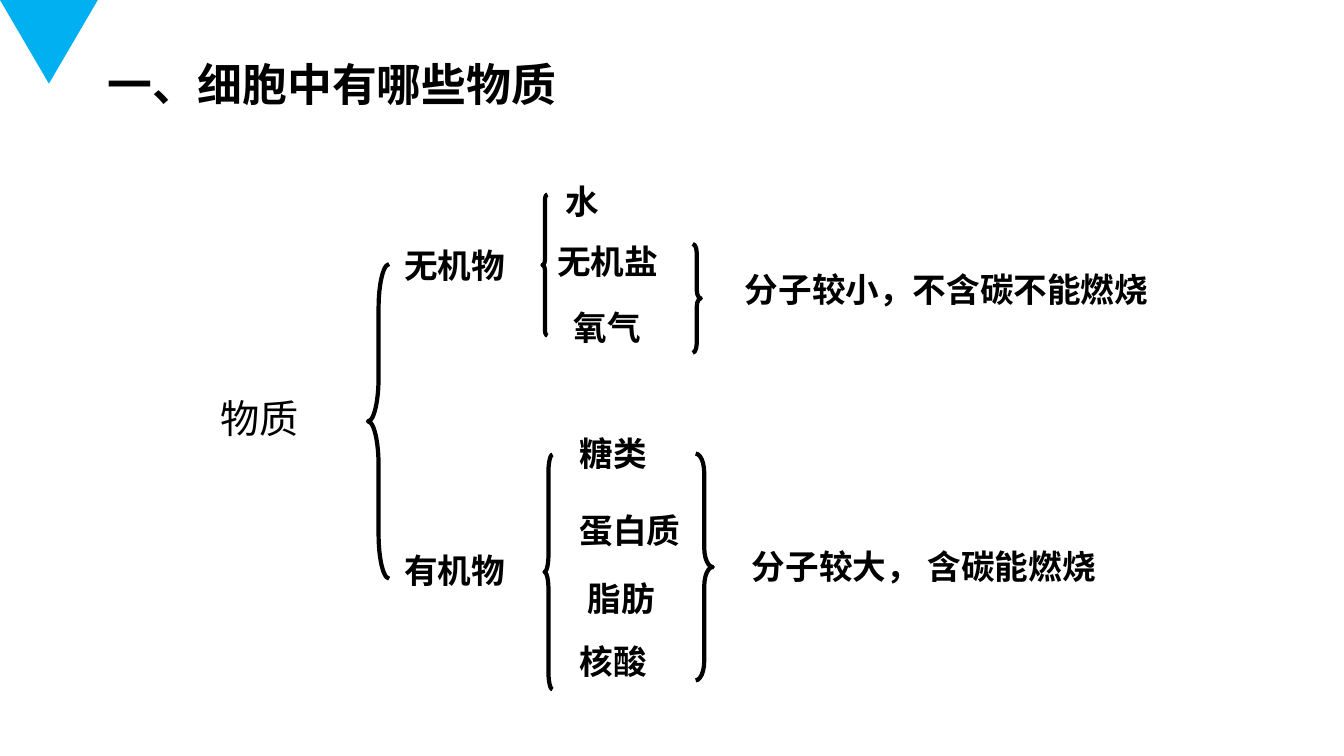
"""Build a slide that classifies the substances found in cells."""
from dataclasses import dataclass

from pptx import Presentation
from pptx.dml.color import RGBColor
from pptx.enum.shapes import MSO_SHAPE
from pptx.enum.text import MSO_ANCHOR, MSO_AUTO_SIZE, PP_ALIGN
from pptx.slide import Slide
from pptx.text.text import TextFrame
from pptx.util import Inches, Pt


@dataclass(frozen=True)
class Theme:
    font: str = "Arial"
    ink: RGBColor = RGBColor(0, 0, 0)
    accent: RGBColor = RGBColor(0x00, 0xB0, 0xF0)
    title_size: int = 32
    root_size: int = 28
    label_size: int = 24
    brace_line: int = 3


THEME = Theme()


@dataclass(frozen=True)
class Label:
    text: str
    left: float
    top: float
    width: float
    height: float = 0.5
    size: int = THEME.label_size
    bold: bool = True
    wrap: bool = False


@dataclass(frozen=True)
class Brace:
    kind: MSO_SHAPE
    left: float
    top: float
    width: float
    height: float
    curl: float


TITLE = Label("一、细胞中有哪些物质", 0.97, 0.51, 4.81, 0.64, THEME.title_size)

LABELS = (
    Label("物质", 2.09, 3.86, 1.56, 0.57, THEME.root_size, bold=False, wrap=True),
    Label("无机物", 3.91, 2.38, 1.24),
    Label("水", 5.51, 1.75, 0.65, wrap=True),
    Label("无机盐", 5.43, 2.34, 1.24),
    Label("氧气", 5.59, 3.0, 1.5, wrap=True),
    Label("分子较小，不含碳不能燃烧", 7.29, 2.62, 5.9, wrap=True),
    Label("有机物", 3.91, 5.41, 1.24),
    Label("糖类", 5.65, 4.25, 0.89),
    Label("蛋白质", 5.65, 5.01, 1.24),
    Label("脂肪", 5.73, 5.68, 0.89),
    Label("核酸", 5.65, 6.31, 0.89),
    Label("分子较大， 含碳能燃烧", 7.36, 5.37, 5.9, wrap=True),
)

BRACES = (
    Brace(MSO_SHAPE.LEFT_BRACE, 3.65, 2.62, 0.21, 3.12, 2.08),
    Brace(MSO_SHAPE.LEFT_BRACE, 5.38, 1.93, 0.05, 1.4, 1.0),
    Brace(MSO_SHAPE.RIGHT_BRACE, 6.87, 2.42, 0.08, 1.08, 1.08),
    Brace(MSO_SHAPE.LEFT_BRACE, 5.4, 4.51, 0.08, 2.33, 2.08),
    Brace(MSO_SHAPE.RIGHT_BRACE, 6.9, 4.5, 0.17, 2.25, 1.13),
)


def write_label(frame: TextFrame, label: Label) -> None:
    """Write one styled, left-aligned line into a text frame."""
    frame.word_wrap = label.wrap
    frame.auto_size = MSO_AUTO_SIZE.SHAPE_TO_FIT_TEXT
    frame.vertical_anchor = MSO_ANCHOR.TOP
    para = frame.paragraphs[0]
    para.alignment = PP_ALIGN.LEFT
    span = para.add_run()
    span.text = label.text
    span.font.name = THEME.font
    span.font.size = Pt(label.size)
    span.font.bold = label.bold
    span.font.color.rgb = THEME.ink


def place_title(page: Slide, label: Label) -> None:
    """Move the title placeholder and fill it in."""
    title = page.shapes.title
    title.left, title.top = Inches(label.left), Inches(label.top)
    title.width, title.height = Inches(label.width), Inches(label.height)
    write_label(title.text_frame, label)


def add_label(page: Slide, label: Label) -> None:
    """Add a text box holding one label."""
    box = page.shapes.add_textbox(
        Inches(label.left), Inches(label.top), Inches(label.width), Inches(label.height)
    )
    write_label(box.text_frame, label)


def add_brace(page: Slide, brace: Brace) -> None:
    """Add an unfilled brace that groups labels."""
    shape = page.shapes.add_shape(
        brace.kind,
        Inches(brace.left), Inches(brace.top), Inches(brace.width), Inches(brace.height),
    )
    shape.shadow.inherit = False
    shape.adjustments[0] = brace.curl
    shape.fill.background()
    shape.line.color.rgb = THEME.ink
    shape.line.width = Pt(THEME.brace_line)


def add_corner(page: Slide) -> None:
    """Add the downward triangle in the top left corner."""
    corner = page.shapes.add_shape(
        MSO_SHAPE.ISOSCELES_TRIANGLE, 0, 0, Inches(0.97), Inches(0.83)
    )
    corner.rotation = 180
    corner.shadow.inherit = False
    corner.fill.solid()
    corner.fill.fore_color.rgb = THEME.accent
    corner.line.fill.background()


def main() -> None:
    """Build and save the deck."""
    deck = Presentation()
    deck.slide_width, deck.slide_height = Inches(13.33), Inches(7.5)
    page = deck.slides.add_slide(deck.slide_layouts.get_by_name("Title Only"))
    add_corner(page)
    place_title(page, TITLE)
    for brace in BRACES:
        add_brace(page, brace)
    for label in LABELS:
        add_label(page, label)
    deck.save("out.pptx")


if __name__ == "__main__":
    main()
